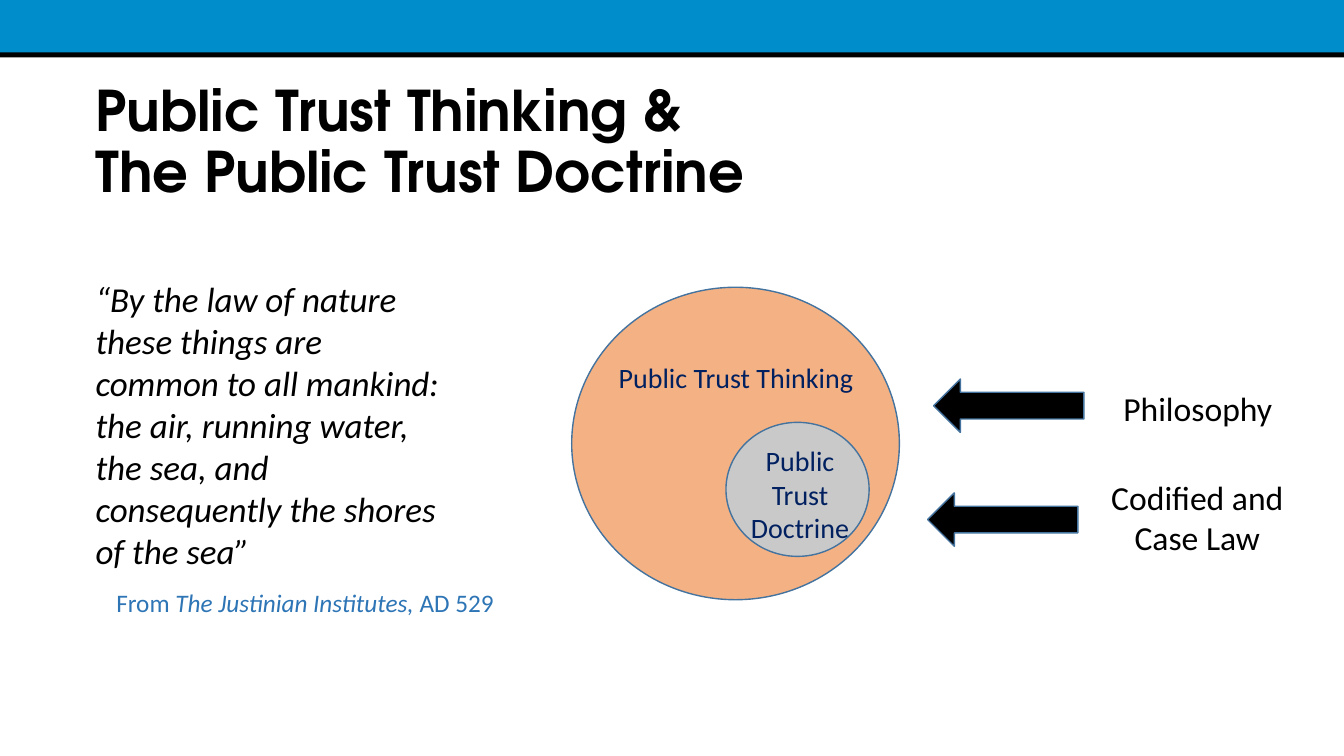
from pptx import Presentation
from pptx.dml.color import RGBColor
from pptx.enum.shapes import MSO_SHAPE
from pptx.enum.text import MSO_ANCHOR, PP_ALIGN
from pptx.util import Inches, Pt

COLORS = {
    "band": "008DCC", "page": "FFFFFF", "ink": "000000", "outline": "43739E",
    "thinking": "F4B183", "doctrine": "C9C9C9", "navy": "002060", "source": "2E75B6",
}
SLIDE_W, SLIDE_H = 13.33, 7.5


def rgb(name):
    return RGBColor.from_string(COLORS[name])


def add_figure(slide, kind, box, fill, outline=None):
    figure = slide.shapes.add_shape(kind, *map(Inches, box))
    figure.shadow.inherit = False
    figure.fill.solid()
    figure.fill.fore_color.rgb = rgb(fill)
    if outline:
        figure.line.color.rgb = rgb(outline)
        figure.line.width = Pt(1)
    else:
        figure.line.fill.background()


def add_text(slide, box, lines, size, color="ink", font="Calibri",
             align=PP_ALIGN.CENTER, bold=False, wrap=True):
    """Write lines, each a list of (text, italic) runs, as one paragraph."""
    frame = slide.shapes.add_textbox(*map(Inches, box)).text_frame
    frame.word_wrap = wrap
    frame.vertical_anchor = MSO_ANCHOR.TOP
    paragraph = frame.paragraphs[0]
    paragraph.alignment = align
    for index, line in enumerate(lines):
        if index:
            paragraph.add_line_break()
        for text, italic in line:
            run = paragraph.add_run()
            run.text = text
            run.font.name = font
            run.font.size = Pt(size)
            run.font.bold = bold
            run.font.italic = italic
            run.font.color.rgb = rgb(color)
    return paragraph


def add_backdrop(slide):
    slide.background.fill.solid()
    slide.background.fill.fore_color.rgb = rgb("band")
    add_figure(slide, MSO_SHAPE.RECTANGLE, (0, 0.56, SLIDE_W, SLIDE_H - 0.56), "page")
    add_figure(slide, MSO_SHAPE.RECTANGLE, (0, 0.52, SLIDE_W, 0.05), "ink")


def add_title(slide, box):
    title = add_text(slide, box,
                     [[("Public Trust Thinking &", False)],
                      [("The Public Trust Doctrine", False)]],
                     40, font="TeX Gyre Adventor", align=PP_ALIGN.LEFT, bold=True)
    title.line_spacing = 0.9


def add_quote(slide, left, top):
    add_text(slide, (left, top, 3.64, 3.48),
             [[("“By the law of nature these things are common to all mankind: "
                "the air, running water, the sea, and consequently the shores "
                "of the sea”", True)]],
             25, align=PP_ALIGN.LEFT)
    add_text(slide, (left + 0.18, top + 3.08, 3.99, 0.4),
             [[("From ", False), ("The Justinian Institutes, ", True), ("AD 529", False)]],
             18, "source", wrap=False)


def add_nested_circles(slide, left, top):
    circles = [
        ((0, 0, 3.25, 3.1), "thinking", "Public Trust Thinking", (0.34, 0.68, 2.58, 0.44)),
        ((1.53, 1.34, 1.42, 1.33), "doctrine", "Public Trust Doctrine", (1.62, 1.5, 1.29, 1.11)),
    ]
    for (x, y, width, height), fill, _, _ in circles:
        add_figure(slide, MSO_SHAPE.OVAL, (left + x, top + y, width, height), fill, "outline")
    for _, _, label, (x, y, width, height) in circles:
        add_text(slide, (left + x, top + y, width, height), [[(label, False)]], 20, "navy")


def add_basis(slide, arrow_left, arrow_top, label, label_box):
    """Place a left-pointing arrow and the label it starts from."""
    add_text(slide, label_box, [[(label, False)]], 24)
    add_figure(slide, MSO_SHAPE.LEFT_ARROW, (arrow_left, arrow_top, 1.49, 0.53),
               "ink", "outline")


def main():
    deck = Presentation()
    deck.slide_width, deck.slide_height = Inches(SLIDE_W), Inches(SLIDE_H)
    slide = deck.slides.add_slide(deck.slide_layouts[6])
    add_backdrop(slide)
    add_title(slide, (0.85, 0.78, 11.5, 1.45))
    add_quote(slide, 0.85, 2.7)
    add_nested_circles(slide, 5.67, 2.85)
    add_basis(slide, 9.26, 3.76, "Philosophy", (10.93, 3.8, 1.9, 0.5))
    add_basis(slide, 9.2, 4.89, "Codified and Case Law", (10.59, 4.68, 2.57, 0.91))
    deck.save("out.pptx")


if __name__ == "__main__":
    main()
